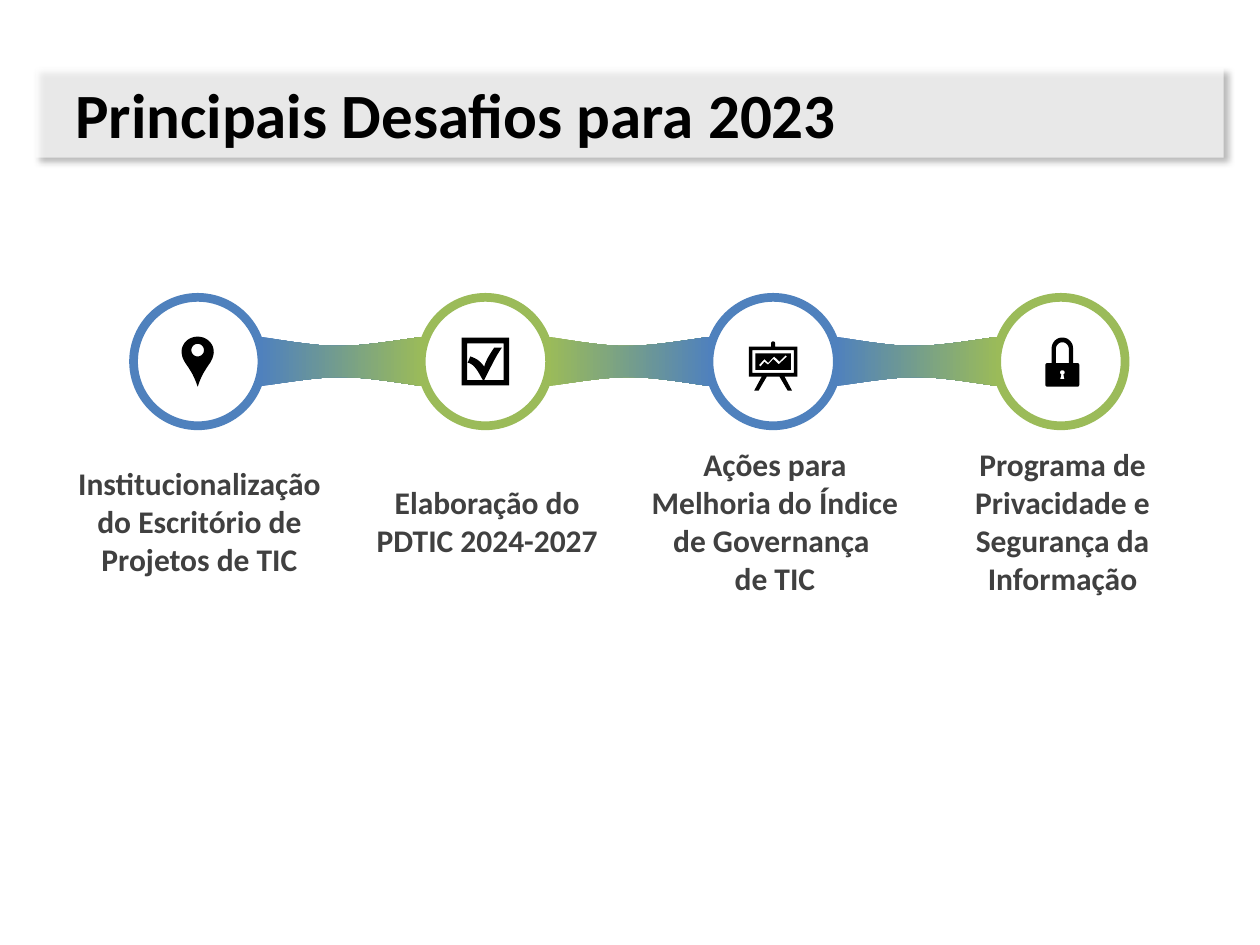
from lxml import etree
from pptx import Presentation
from pptx.dml.color import RGBColor
from pptx.enum import shapes, text
from pptx.oxml import parse_xml
from pptx.oxml.ns import nsdecls, qn
from pptx.util import Pt

COLORS = {"blue": "4F81BD", "green": "9BBB59", "white": "FFFFFF",
          "black": "000000", "label": "404040"}

# Content: ring colour, icon, label paragraphs, label lines, label width
TITLE = "Principais Desafios para 2023"
STEPS = [
    ("blue", "pin", ["Institucionalização do Escritório de Projetos de TIC"], 3, 162),
    ("green", "check", ["Elaboração do PDTIC 2024-2027"], 2, 162),
    ("blue", "board", ["Ações para Melhoria do Índice de Governança ", "de TIC"], 4, 162),
    ("green", "lock", ["Programa de Privacidade e Segurança da Informação"], 4, 175),
]
FIRST_X, PITCH, RING_Y, RING_SIZE = 113, 164.4, 206.6, 73.4
LABEL_Y, LINE_HEIGHT = 297.7, 21.8


# Outlines in points around a ring centre: pairs are lines, sixes are curves
def flatten(segments, steps=12):
    points = []
    for segment in segments:
        if len(segment) == 2:
            points.append(segment)
            continue
        x0, y0 = points[-1]
        x1, y1, x2, y2, x3, y3 = segment
        for i in range(1, steps + 1):
            t = i / steps
            s = 1 - t
            a, b, c, d = s ** 3, 3 * s * s * t, 3 * s * t * t, t ** 3
            points.append((a * x0 + b * x1 + c * x2 + d * x3,
                           a * y0 + b * y1 + c * y2 + d * y3))
    return points


def mirror(segments, axis=0):
    half = flatten(segments)
    right = [(axis + x, y) for x, y in half]
    left = [(axis - x, y) for x, y in reversed(half)]
    return right + left


def rect(half_width, half_height):
    return mirror([(half_width, -half_height), (half_width, half_height)])


LOCK_AXIS = 0.9
ICONS = {
    "pin": [
        mirror([(0, -14.2), (2.4, -14.2, 4.8, -13.4, 6.7, -11.5),
                (10.3, -7.9, 9.8, -2.9, 6.5, 1.6), (3.6, 5.9, 2, 8.4, 0, 14.4)]),
        mirror([(0, -10.1), (2, -10.1, 3.6, -8.5, 3.6, -6.5),
                (3.6, -4.5, 2, -2.9, 0, -2.9)]),
    ],
    "check": [
        rect(13.6, 13.6),
        flatten([(-10.4, -10.4), (-10.4, 10.6), (-1.4, 10.6),
                 (-3.6, 7.2, -5.8, 1.4, -10.1, 0.7), (-8.6, -2.9),
                 (-4.3, -1.4, -2.9, 0, -0.7, 2.9), (0.7, -1.4, 2.2, -3.6, 5, -7.9),
                 (9.4, -7.9), (5.8, -2.9, 2.2, 5, -0.7, 10.6),
                 (10.4, 10.6), (10.4, -10.4)]),
    ],
    "board": [
        mirror([(0, -11.5), (0.7, -11.5, 1.2, -11, 1.2, -10.1), (1.2, -8.6),
                (13.9, -8.6), (13.9, 8.6), (6.5, 8.6), (10.8, 16.6),
                (8.3, 16.6), (3.6, 8.6)]),
        rect(11.9, 6.5),
        rect(10.1, 4.7),
        [(7.2, -3.6), (3.6, 0), (0.6, -2.9), (-2.9, 0.7), (-5, -1.4), (-8.1, 2),
         (-7.2, 2.9), (-5, 0.2), (-2.9, 1.8), (0.1, -1.4), (3.2, 1.6), (7.9, -2.8)],
    ],
    "lock": [
        mirror([(0, -13.7), (3.4, -13.7, 6.1, -11, 6.1, -7.6), (6.1, 0.9), (8.5, 0.9),
                (9.2, 0.9, 9.7, 1.4, 9.7, 2.1), (9.7, 13.2),
                (9.7, 13.9, 9.2, 14.4, 8.5, 14.4)], LOCK_AXIS),
        mirror([(0, -11), (2, -11, 3.7, -9.3, 3.7, -7.3), (3.7, 0.9)], LOCK_AXIS),
        mirror([(0, 5), (1.6, 5, 1.8, 6.8, 0.6, 7.4), (1.2, 10.1)], LOCK_AXIS),
    ],
}
RIBBON = [flatten([(35.6, -14.2), (80, -6.7, 83.5, -7.5, 129, -14.2),
                   (129, 14.2), (83.5, 7.2, 80, 7.2, 35.6, 14.2)])]


def rgb(name):
    return RGBColor.from_string(COLORS[name])


def add_outline(page, contours, center_x):
    placed = [[(Pt(center_x + x), Pt(RING_Y + y)) for x, y in contour]
              for contour in contours]
    builder = page.shapes.build_freeform(*placed[0][0])
    for i, contour in enumerate(placed):
        if i:
            builder.move_to(*contour[0])
        builder.add_line_segments(contour[1:], close=True)
    shape = builder.convert_to_shape()
    shape.shadow.inherit = False
    shape.line.fill.background()
    return shape


def add_text(page, area, paragraphs, align, size, color):
    box = page.shapes.add_textbox(*[Pt(v) for v in area])
    frame = box.text_frame
    frame.word_wrap = True
    frame.vertical_anchor = text.MSO_ANCHOR.MIDDLE
    font_format = {"name": "Calibri", "size": Pt(size), "bold": True}
    for i, content in enumerate(paragraphs):
        para = frame.add_paragraph() if i else frame.paragraphs[0]
        para.alignment = align
        span = para.add_run()
        span.text = content
        for key, value in font_format.items():
            setattr(span.font, key, value)
        span.font.color.rgb = rgb(color)
    return box


def add_title(page):
    bar = page.shapes.add_shape(shapes.MSO_SHAPE.ROUND_2_DIAG_RECTANGLE,
                                Pt(20.2), Pt(38.9), Pt(679), Pt(51.1))
    bar.adjustments[0] = bar.adjustments[1] = 0
    bar.fill.solid()
    bar.fill.fore_color.rgb = rgb("white")
    bar.line.fill.background()
    # Translucent fill and soft shadow
    color = bar._element.spPr.find(qn("a:solidFill"))[0]
    etree.SubElement(color, qn("a:alpha"), val="68000")
    bar._element.spPr.append(parse_xml(
        f'<a:effectLst {nsdecls("a")}><a:outerShdw blurRad="{Pt(4)}" dist="{Pt(3)}" '
        f'dir="2700000" algn="tl" rotWithShape="0"><a:srgbClr val="{COLORS["black"]}">'
        '<a:alpha val="40000"/></a:srgbClr></a:outerShdw></a:effectLst>'))
    add_text(page, (36, 39.6, 648, 49.7), [TITLE], text.PP_ALIGN.LEFT, 36, "black")


def main():
    deck = Presentation()
    deck.slide_width, deck.slide_height = Pt(720), Pt(540)
    page = deck.slides.add_slide(deck.slide_layouts[6])
    add_title(page)
    centers = [FIRST_X + i * PITCH for i in range(len(STEPS))]

    # Rings and labels
    for x, (color, icon, paragraphs, lines, width) in zip(centers, STEPS):
        ring = page.shapes.add_shape(
            shapes.MSO_SHAPE.OVAL, Pt(x - RING_SIZE / 2), Pt(RING_Y - RING_SIZE / 2),
            Pt(RING_SIZE), Pt(RING_SIZE))
        ring.shadow.inherit = False
        ring.fill.solid()
        ring.fill.fore_color.rgb = rgb("white")
        ring.line.color.rgb = rgb(color)
        ring.line.width = Pt(5)
        height = 7.2 + lines * LINE_HEIGHT
        label = add_text(page, (x + 1 - width / 2, LABEL_Y - height / 2, width, height),
                         paragraphs, text.PP_ALIGN.CENTER, 18, "label")
        label.text_frame.auto_size = text.MSO_AUTO_SIZE.SHAPE_TO_FIT_TEXT

    # Ribbons fading from one ring colour to the next
    for x, step, following in zip(centers, STEPS, STEPS[1:]):
        ribbon = add_outline(page, RIBBON, x)
        ribbon.fill.gradient()
        ribbon.fill.gradient_angle = 0
        for stop, name in zip(ribbon.fill.gradient_stops, (step[0], following[0])):
            stop.color.rgb = rgb(name)

    # Icons
    for x, step in zip(centers, STEPS):
        icon = add_outline(page, ICONS[step[1]], x)
        icon.fill.solid()
        icon.fill.fore_color.rgb = rgb("black")

    deck.save("out.pptx")


if __name__ == "__main__":
    main()
